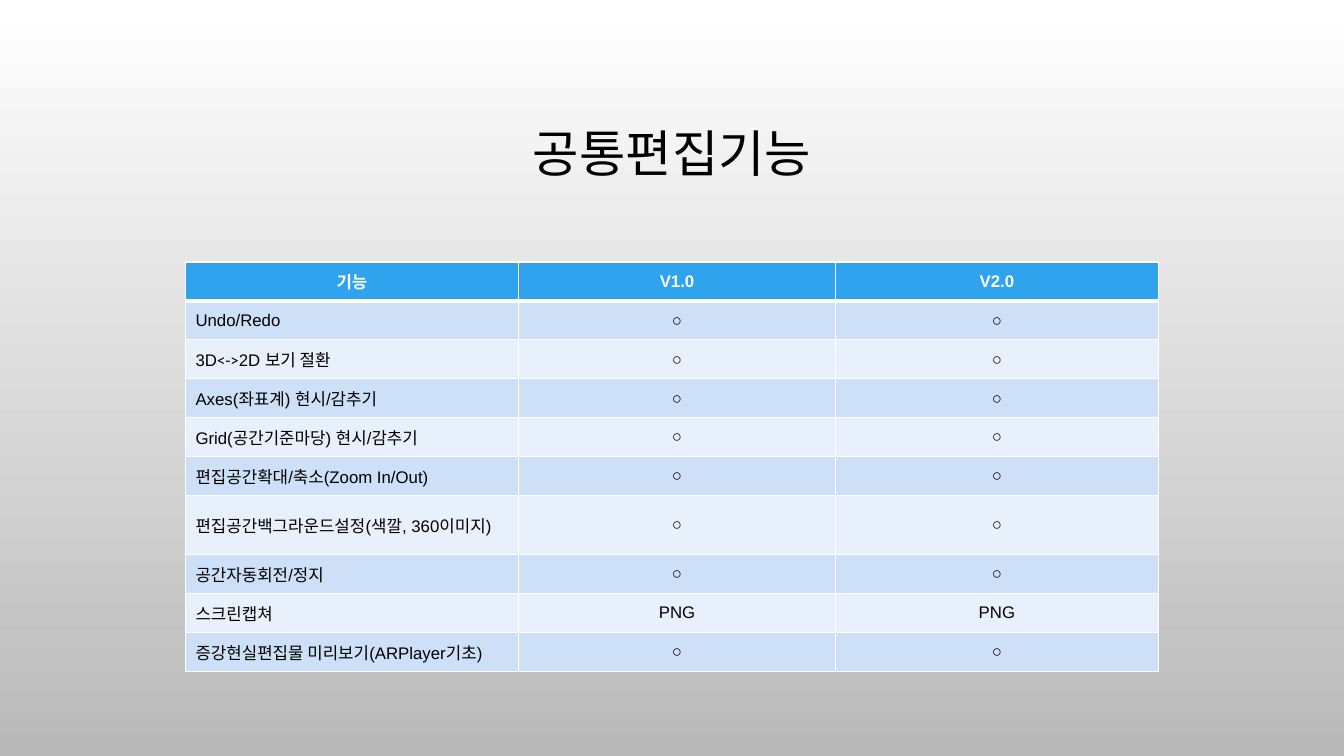
import lxml.etree
import pptx
import pptx.dml.color
import pptx.enum.text
import pptx.oxml.ns
import pptx.util

Pt = pptx.util.Pt
RGBColor = pptx.dml.color.RGBColor
ALIGN = pptx.enum.text.PP_ALIGN
MIDDLE = pptx.enum.text.MSO_ANCHOR.MIDDLE
qn = pptx.oxml.ns.qn

BLACK = RGBColor(0x00, 0x00, 0x00)
WHITE = RGBColor(0xFF, 0xFF, 0xFF)
GREY = RGBColor(0xB9, 0xB9, 0xB9)
HEADER = RGBColor(0x2F, 0xA3, 0xEE)
BAND_DARK = RGBColor(0xCD, 0xE0, 0xF8)
BAND_LIGHT = RGBColor(0xE8, 0xF0, 0xFC)

ROW = 27.8
TWO_LINE_ROW = 42.2
FEATURES = [
    (["Undo/Redo"], "○", ROW),
    (["3D", "<->", "2D 보기 절환"], "○", ROW),
    (["Axes(좌표계) 현시/감추기"], "○", ROW),
    (["Grid(공간기준마당) 현시/감추기"], "○", ROW),
    (["편집공간확대/축소(Zoom In/Out)"], "○", ROW),
    (["편집공간백그라운드설정(색깔, 360이미지)"], "○", TWO_LINE_ROW),
    (["공간자동회전/정지"], "○", ROW),
    (["스크린캡쳐"], "PNG", ROW),
    (["증강현실편집물 미리보기(ARPlayer기초)"], "○", ROW),
]


class FeatureSlide:
    """Draws the elements of the feature slide in one shared style."""

    title_font = "Calibri"
    body_font = "Arial"

    def __init__(self, prs):
        self.s = prs.slides.add_slide(prs.slide_layouts[6])

    def background(self, top, bottom):
        fill = self.s.background.fill
        fill.gradient()
        fill.gradient_angle = 270
        for stop, color, position in zip(fill.gradient_stops, (top, bottom), (0, 1)):
            stop.color.rgb = color
            stop.position = position

    def style(self, p, size, color, align, bold=False):
        p.alignment = align
        p.font.size = Pt(size)
        p.font.bold = bold
        p.font.color.rgb = color

    def title(self, text, left, top, width, height):
        sp = self.s.shapes.add_textbox(Pt(left), Pt(top), Pt(width), Pt(height))
        tf = sp.text_frame
        tf.word_wrap = True
        tf.vertical_anchor = MIDDLE
        p = tf.paragraphs[0]
        p.text = text
        p.line_spacing = 0.9
        self.style(p, 36, BLACK, ALIGN.CENTER)
        p.font.name = self.title_font

    def borders(self, cell, **widths):
        properties = cell._tc.get_or_add_tcPr()
        for i, (side, width) in enumerate(widths.items()):
            line = lxml.etree.Element(qn(f"a:ln{side}"), w=str(Pt(width)))
            fill = lxml.etree.SubElement(line, qn("a:solidFill"))
            lxml.etree.SubElement(fill, qn("a:srgbClr"), val=str(WHITE))
            properties.insert(i, line)

    def cell(self, cell, parts, fill, color, align, bold=False):
        cell.fill.solid()
        cell.fill.fore_color.rgb = fill
        cell.vertical_anchor = MIDDLE
        p = cell.text_frame.paragraphs[0]
        self.style(p, 12, color, align, bold)
        p.font.name = self.body_font
        for part in parts:
            r = p.add_run()
            r.text = part
            if part == "<->":
                r.font.name = self.title_font

    def table(self, header, features, left, top, widths):
        heights = [ROW] + [height for _, _, height in features]
        table = self.s.shapes.add_table(
            len(heights), len(widths), Pt(left), Pt(top), Pt(sum(widths)), Pt(sum(heights))
        ).table
        for column, width in zip(table.columns, widths):
            column.width = Pt(width)
        for row, height in zip(table.rows, heights):
            row.height = Pt(height)
        for i, text in enumerate(header):
            self.cell(table.cell(0, i), [text], HEADER, WHITE, ALIGN.CENTER, True)
            self.borders(table.cell(0, i), L=1, R=1, T=1, B=3)
            self.borders(table.cell(1, i), L=1, R=1, T=3, B=1)
        for i, (name, support, _) in enumerate(features, 1):
            band = BAND_DARK if i % 2 else BAND_LIGHT
            self.cell(table.cell(i, 0), name, band, BLACK, ALIGN.LEFT)
            for j in range(1, len(widths)):
                self.cell(table.cell(i, j), [support], band, BLACK, ALIGN.CENTER)


def main():
    prs = pptx.Presentation()
    prs.slide_width, prs.slide_height = Pt(960), Pt(540)
    slide = FeatureSlide(prs)
    slide.background(WHITE, GREY)
    slide.title("공통편집기능", 72, 48.5, 816, 126)
    slide.table(["기능", "V1.0", "V2.0"], FEATURES, 132.5, 187.2, [237.9, 226.5, 230.4])
    prs.save("out.pptx")


if __name__ == "__main__":
    main()
